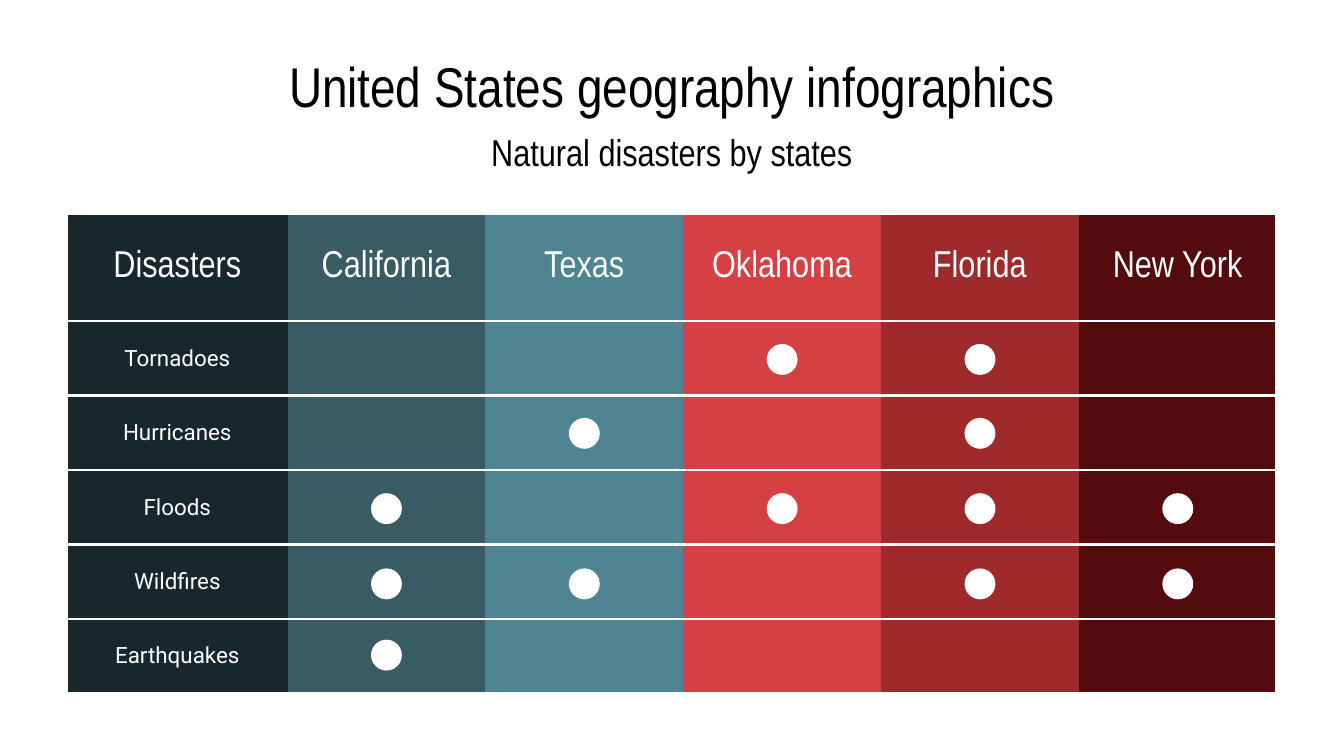
"""Build a slide with a table of natural disasters by state."""
from lxml import etree
from pptx import Presentation
from pptx.dml.color import RGBColor
from pptx.enum.shapes import MSO_SHAPE
from pptx.enum.text import MSO_ANCHOR, MSO_AUTO_SIZE, PP_ALIGN
from pptx.oxml.ns import qn
from pptx.util import Inches, Pt

OVAL = MSO_SHAPE.OVAL
TOP, MIDDLE = MSO_ANCHOR.TOP, MSO_ANCHOR.MIDDLE
CENTER = PP_ALIGN.CENTER
FIXED = MSO_AUTO_SIZE.NONE
WHITE, BLACK = "FFFFFF", "000000"
HEAD, BODY = "Arial Narrow", "Roboto"

STATES = {
    "Disasters": "17272B",
    "California": "385B64",
    "Texas": "4F8492",
    "Oklahoma": "D54142",
    "Florida": "9E2A2B",
    "New York": "540B0E",
}
ROWS = [
    ("Tornadoes", 2.56, (3, 4)),
    ("Hurricanes", 3.11, (2, 4)),
    ("Floods", 3.67, (1, 3, 4, 5)),
    ("Wildfires", 4.23, (1, 2, 4, 5)),
    ("Earthquakes", 4.76, (1,)),
]
LEFT, UPPER = 0.5, 1.59
WIDE, TALL = 9, 3.57
FIRST, HIGH = 1.64, 0.8
COL = (WIDE - FIRST) / (len(STATES) - 1)
ROW = (TALL - HIGH) / len(ROWS)
DOT = 0.23


def write(frame, text, size, font, color):
    """Fill a text frame or cell with one centred line."""
    for side in ("left", "right", "top", "bottom"):
        setattr(frame, f"margin_{side}", Inches(0.1))
    frame.vertical_anchor = MIDDLE
    para = getattr(frame, "text_frame", frame).paragraphs[0]
    para.text = text
    para.alignment = CENTER
    para.font.size = Pt(size)
    para.font.name = font
    para.font.color.rgb = RGBColor.from_string(color)


def paint(cell, color, edges):
    """Give a cell its white edges and its fill."""
    props = cell._tc.get_or_add_tcPr()
    for side in "LRTB":
        line = etree.SubElement(props, qn(f"a:ln{side}"), w=str(Pt(1.5)))
        if side in edges:
            solid = etree.SubElement(line, qn("a:solidFill"))
            etree.SubElement(solid, qn("a:srgbClr"), val=WHITE)
        else:
            etree.SubElement(line, qn("a:noFill"))
    cell.fill.solid()
    cell.fill.fore_color.rgb = RGBColor.from_string(color)


deck = Presentation()
deck.slide_width = Inches(10)
deck.slide_height = deck.slide_width * 9 // 16
slide = deck.slides.add_slide(deck.slide_layouts[5])
shapes = slide.shapes

title = shapes.title
title.left, title.top = Inches(LEFT), Inches(0.28)
title.width, title.height = Inches(WIDE), Inches(0.63)
write(title.text_frame, "United States geography infographics", 30, HEAD, BLACK)
title.text_frame.vertical_anchor = TOP
title.text_frame.auto_size = FIXED

sub = shapes.add_textbox(Inches(2.11), Inches(0.91), Inches(5.78), Inches(0.44))
sub.text_frame.word_wrap = True
write(sub.text_frame, "Natural disasters by states", 20, HEAD, BLACK)

table = shapes.add_table(
    len(ROWS) + 1, len(STATES),
    Inches(LEFT), Inches(UPPER), Inches(WIDE), Inches(TALL),
).table
for c, (state, color) in enumerate(STATES.items()):
    table.columns[c].width = Inches(COL if c else FIRST)
    edges = "TB" + {0: "L", len(STATES) - 1: "R"}.get(c, "")
    for r in range(len(ROWS) + 1):
        paint(table.cell(r, c), color, edges)
    write(table.cell(0, c), state, 20, HEAD, WHITE)

table.rows[0].height = Inches(HIGH)
for r, (name, y, hits) in enumerate(ROWS, 1):
    table.rows[r].height = Inches(ROW)
    write(table.cell(r, 0), name, 12, BODY, WHITE)
    for c in hits:
        x = LEFT + FIRST + COL * (c - 0.5) - DOT / 2
        dot = shapes.add_shape(OVAL, Inches(x), Inches(y), Inches(DOT), Inches(DOT))
        dot.shadow.inherit = False
        dot.fill.solid()
        dot.fill.fore_color.rgb = RGBColor.from_string(WHITE)
        dot.line.fill.background()

deck.save("out.pptx")
